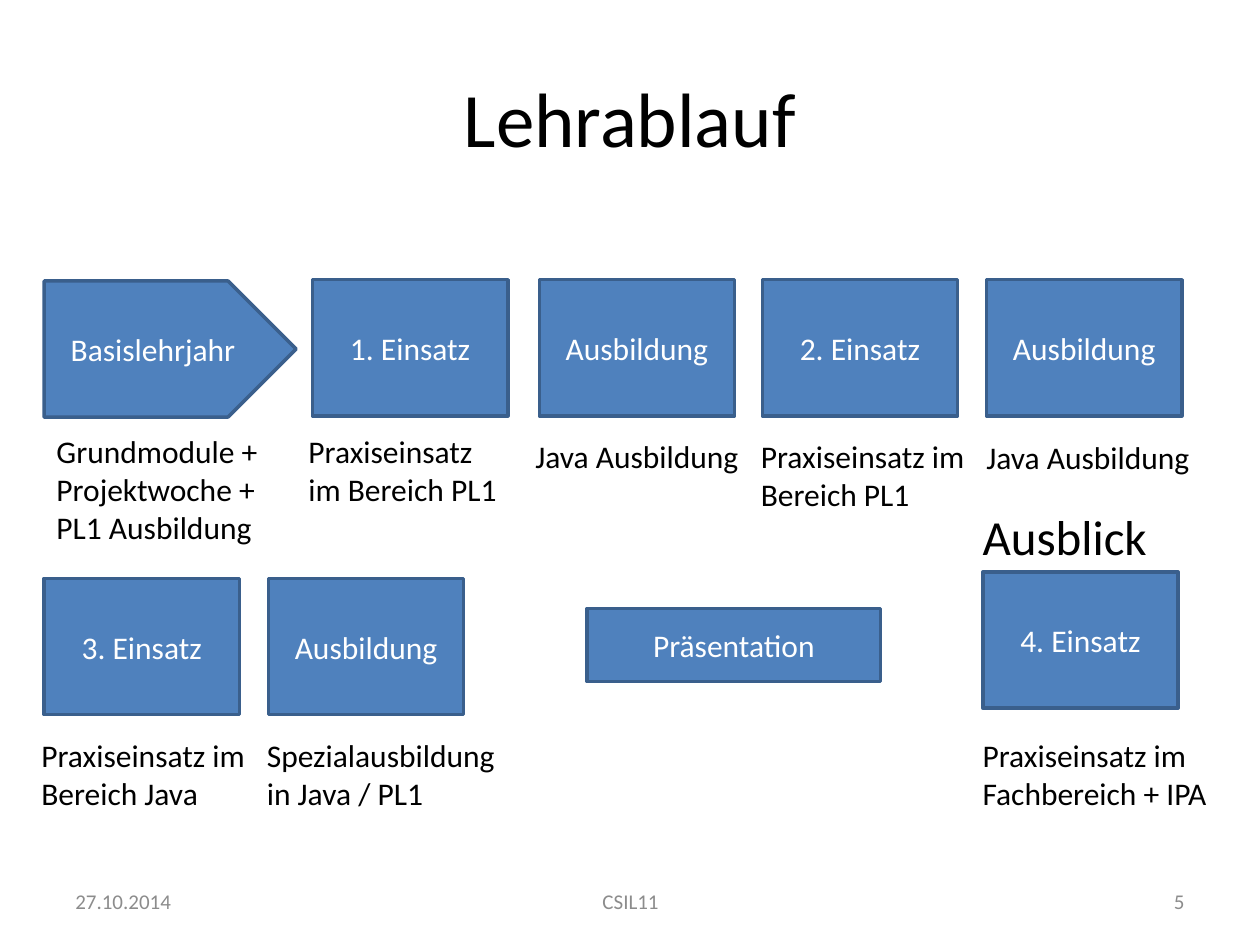
from pptx import Presentation
from pptx.dml.color import RGBColor
from pptx.enum.shapes import MSO_SHAPE as Shape
from pptx.enum.text import MSO_ANCHOR as Anchor, PP_ALIGN as Align
from pptx.util import Inches, Pt

BLUE = RGBColor(0x4F, 0x81, 0xBD)
DARK_BLUE = RGBColor(0x3A, 0x5F, 0x8C)
WHITE = RGBColor(0xFF, 0xFF, 0xFF)
BLACK = RGBColor(0, 0, 0)
GRAY = RGBColor(0x8C, 0x8C, 0x8C)

STEP_WIDTH, STEP_HEIGHT = 1.55, 1.08
LINE_HEIGHT, TEXT_PADDING = 0.3, 0.1
UPPER_TOP, LOWER_TOP = 2.22, 4.59
LOWER_NOTE_TOP = 5.79

# label, left, top
STEPS = [
    ("1. Einsatz", 2.48, UPPER_TOP),
    ("Ausbildung", 4.28, UPPER_TOP),
    ("2. Einsatz", 6.05, UPPER_TOP),
    ("Ausbildung", 7.83, UPPER_TOP),
    ("3. Einsatz", 0.35, LOWER_TOP),
    ("Ausbildung", 2.13, LOWER_TOP),
    ("4. Einsatz", 7.8, 4.54),
]

# text, left, top, width, number of lines
NOTES = [
    ("Grundmodule + Projektwoche + PL1 Ausbildung", 0.35, 3.38, 2, 3),
    ("Praxiseinsatz im Bereich PL1", 2.35, 3.38, 1.8, 2),
    ("Java Ausbildung", 4.15, 3.42, 1.9, 1),
    ("Praxiseinsatz im Bereich PL1", 5.94, 3.42, 1.89, 2),
    ("Java Ausbildung", 7.73, 3.43, 2.07, 1),
    ("Praxiseinsatz im Bereich Java", 0.23, LOWER_NOTE_TOP, 1.9, 2),
    ("Spezialausbildung in Java / PL1", 2.02, LOWER_NOTE_TOP, 2.13, 2),
    ("Praxiseinsatz im Fachbereich + IPA", 7.7, LOWER_NOTE_TOP, 2.2, 2),
]

# text, left, width, alignment
FOOTER = [
    ("27.10.2014", 0.5, 2.33, Align.LEFT),
    ("CSIL11", 3.42, 3.17, Align.CENTER),
    ("5", 7.17, 2.33, Align.RIGHT),
]


def write(shape, text, size, color, align, anchor):
    frame = shape.text_frame
    frame.word_wrap = True
    frame.vertical_anchor = anchor
    paragraph = frame.paragraphs[0]
    paragraph.text = text
    paragraph.alignment = align
    font = paragraph.runs[0].font
    for name, value in {"name": "Calibri", "size": Pt(size)}.items():
        setattr(font, name, value)
    font.color.rgb = color


def add_text(slide, text, box, size=18, color=BLACK, align=Align.LEFT, anchor=Anchor.TOP):
    shape = slide.shapes.add_textbox(*map(Inches, box))
    write(shape, text, size, color, align, anchor)


def add_block(slide, kind, text, box):
    shape = slide.shapes.add_shape(kind, *map(Inches, box))
    shape.shadow.inherit = False
    shape.fill.solid()
    shape.fill.fore_color.rgb = BLUE
    shape.line.color.rgb = DARK_BLUE
    shape.line.width = Pt(2)
    write(shape, text, 18, WHITE, Align.CENTER, Anchor.MIDDLE)
    return shape


def main():
    presentation = Presentation()
    presentation.slide_width, presentation.slide_height = Inches(10), Inches(7.5)
    slide = presentation.slides.add_slide(presentation.slide_layouts[6])

    add_text(slide, "Lehrablauf", (0.5, 0.3, 9, 1.25), 44,
             align=Align.CENTER, anchor=Anchor.MIDDLE)
    add_block(slide, Shape.PENTAGON, "Basislehrjahr", (0.35, 2.23, 2, STEP_HEIGHT))
    for label, left, top in STEPS:
        step = add_block(slide, Shape.CHEVRON, label, (left, top, STEP_WIDTH, STEP_HEIGHT))
        step.adjustments[0] = 0
    add_block(slide, Shape.RECTANGLE, "Präsentation", (4.66, 4.83, 2.33, 0.58))

    for text, left, top, width, lines in NOTES:
        add_text(slide, text, (left, top, width, lines * LINE_HEIGHT + TEXT_PADDING))
    add_text(slide, "Ausblick", (7.7, 3.97, 1.64, 0.57), 28)

    for text, left, width, align in FOOTER:
        add_text(slide, text, (left, 6.95, width, 0.4), 12, GRAY, align, Anchor.MIDDLE)

    presentation.save("out.pptx")


if __name__ == "__main__":
    main()
